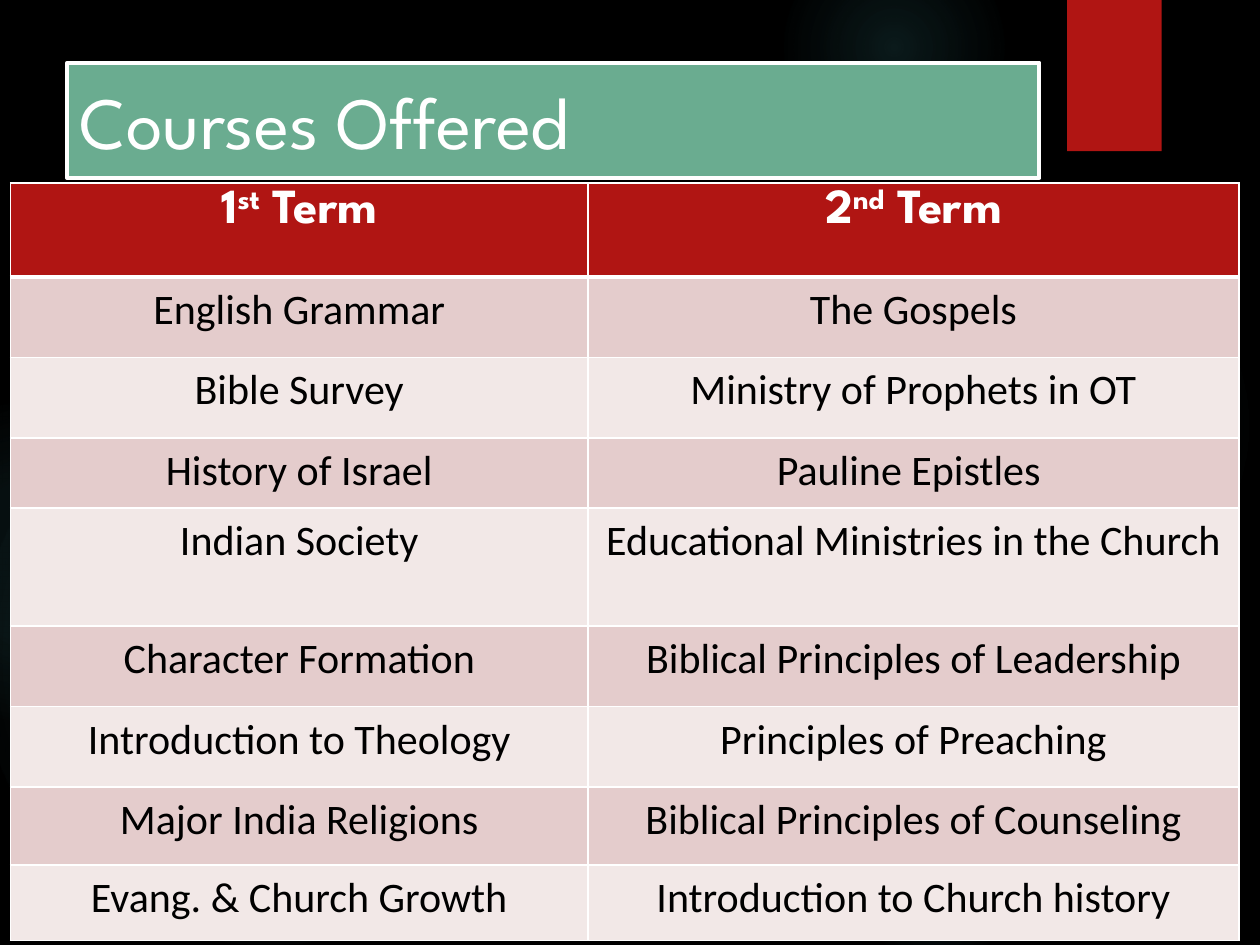
from lxml import etree
from pptx import Presentation
from pptx import util as u
from pptx.dml.color import RGBColor
from pptx.enum import shapes, text
from pptx.oxml import parse_xml
from pptx.oxml.ns import qn

COLORS = {
    "background": "000000", "glow": "50B9C1", "red": "B01513", "green": "6AAC90",
    "white": "FFFFFF", "black": "000000", "band_dark": "E4CCCC", "band_light": "F2E8E7",
}
HEADERS = [("1", "st", " Term"), ("2", "nd", " Term")]
COURSES = [
    ("English Grammar", "The Gospels"),
    ("Bible Survey", "Ministry of Prophets in OT"),
    ("History of Israel", "Pauline Epistles "),
    ("Indian Society", "Educational Ministries in the Church"),
    ("Character Formation", "Biblical Principles of Leadership"),
    ("Introduction to Theology", "Principles of Preaching"),
    ("Major India Religions", "Biblical Principles of Counseling"),
    ("Evang. & Church Growth", "Introduction to Church history"),
]
COL_WIDTHS = [330, 372]
ROW_HEIGHTS = [53.7, 46, 46, 40, 67.6, 46, 46, 44.6, 43.1]
GLOWS = [
    (496, 132, 222, [(0, 7), (36, 6), (69, 0)]),
    (448, -36, 126, [(0, 14), (36, 7), (73, 0)]),
    (496, 480, 78, [(0, 9), (36, 5), (66, 0)]),
    (-12, 210, 330, [(0, 11), (36, 10), (75, 0)]),
    (-66, 228, 186, [(0, 8), (36, 8), (72, 0)]),
]


def rgb(name):
    return RGBColor.from_string(COLORS[name])


class Deck:
    heading_font = "League Spartan"
    body_font = "Calibri"

    def __init__(self):
        self.prs = Presentation()
        self.prs.slide_width, self.prs.slide_height = u.Pt(720), u.Pt(540)
        self.s = self.prs.slides.add_slide(self.prs.slide_layouts[5])
        fill = self.s.background.fill
        fill.solid()
        fill.fore_color.rgb = rgb("background")

    def font(self, p, name, size, color, bold=False):
        p.font.name, p.font.size, p.font.bold = name, u.Pt(size), bold
        p.font.color.rgb = rgb(color)

    def shape(self, kind, x, y, w, h, color):
        sp = self.s.shapes.add_shape(kind, u.Pt(x), u.Pt(y), u.Pt(w), u.Pt(h))
        sp.shadow.inherit = False
        sp.fill.solid()
        sp.fill.fore_color.rgb = rgb(color)
        sp.line.fill.background()
        return sp

    def glow(self, x, y, size, stops):
        sp = self.shape(shapes.MSO_SHAPE.OVAL, x, y, size, size, "glow")
        gs = "".join(
            f'<a:gs pos="{pos * 1000}"><a:srgbClr val="{COLORS["glow"]}">'
            f'<a:alpha val="{alpha * 1000}"/></a:srgbClr></a:gs>'
            for pos, alpha in stops)
        solid = sp._element.spPr.find(qn("a:solidFill"))
        solid.getparent().replace(solid, parse_xml(
            '<a:gradFill xmlns:a="http://schemas.openxmlformats.org/drawingml/2006/main">'
            f'<a:gsLst>{gs}</a:gsLst><a:path path="circle">'
            '<a:fillToRect l="50000" t="50000" r="50000" b="50000"/></a:path></a:gradFill>'))

    def title(self, x, y, w, h, words):
        sp = self.s.shapes.title
        self.s.shapes._spTree.append(sp._element)
        sp.left, sp.top, sp.width, sp.height = map(u.Pt, (x, y, w, h))
        sp.fill.solid()
        sp.fill.fore_color.rgb = rgb("green")
        sp.line.color.rgb = rgb("white")
        sp.line.width = u.Pt(2.25)
        tf = sp.text_frame
        tf.text = words
        tf.vertical_anchor = text.MSO_ANCHOR.MIDDLE
        p = tf.paragraphs[0]
        p.alignment = text.PP_ALIGN.LEFT
        self.font(p, self.heading_font, 42, "white")

    def cell(self, cell, color, top=1, bottom=1):
        cell.fill.solid()
        cell.fill.fore_color.rgb = rgb(color)
        tcPr = cell._tc.get_or_add_tcPr()
        for i, (side, width) in enumerate(zip("LRTB", (1, 1, top, bottom))):
            ln = etree.Element(qn(f"a:ln{side}"), w=str(u.Pt(width)))
            solid = etree.SubElement(ln, qn("a:solidFill"))
            etree.SubElement(solid, qn("a:srgbClr"), val=COLORS["white"])
            tcPr.insert(i, ln)
        p = cell.text_frame.paragraphs[0]
        p.alignment = text.PP_ALIGN.CENTER
        return p

    def header_cell(self, cell, parts):
        p = self.cell(cell, "red", bottom=3)
        self.font(p, self.heading_font, 28, "white", True)
        for part, baseline in zip(parts, (0, 30000, 0)):
            r = p.add_run()
            r.text = part
            if baseline:
                r._r.get_or_add_rPr().set("baseline", str(baseline))

    def course_cell(self, cell, course, row):
        p = self.cell(cell, "band_dark" if row % 2 else "band_light", top=3 if row == 1 else 1)
        cell.margin_left = cell.margin_right = u.Pt(5)
        cell.margin_top = cell.margin_bottom = 0
        p.line_spacing = 1.15
        self.font(p, self.body_font, 24, "black")
        p.add_run().text = course

    def table(self, x, y, headers, courses):
        frame = self.s.shapes.add_table(
            len(courses) + 1, len(headers), u.Pt(x), u.Pt(y),
            u.Pt(sum(COL_WIDTHS)), u.Pt(sum(ROW_HEIGHTS)))
        tbl = frame.table
        for col, width in zip(tbl.columns, COL_WIDTHS):
            col.width = u.Pt(width)
        for row, height in zip(tbl.rows, ROW_HEIGHTS):
            row.height = u.Pt(height)
        for c, parts in enumerate(headers):
            self.header_cell(tbl.cell(0, c), parts)
        for r, names in enumerate(courses, 1):
            for c, course in enumerate(names):
                self.course_cell(tbl.cell(r, c), course, r)


def main():
    deck = Deck()
    for glow in GLOWS:
        deck.glow(*glow)
    deck.shape(shapes.MSO_SHAPE.RECTANGLE, 609.8, 0, 54, 86.4, "red")
    deck.title(38.4, 35.8, 555.6, 66, "Courses Offered")
    deck.table(6, 104.6, HEADERS, COURSES)
    deck.prs.save("out.pptx")


if __name__ == "__main__":
    main()
